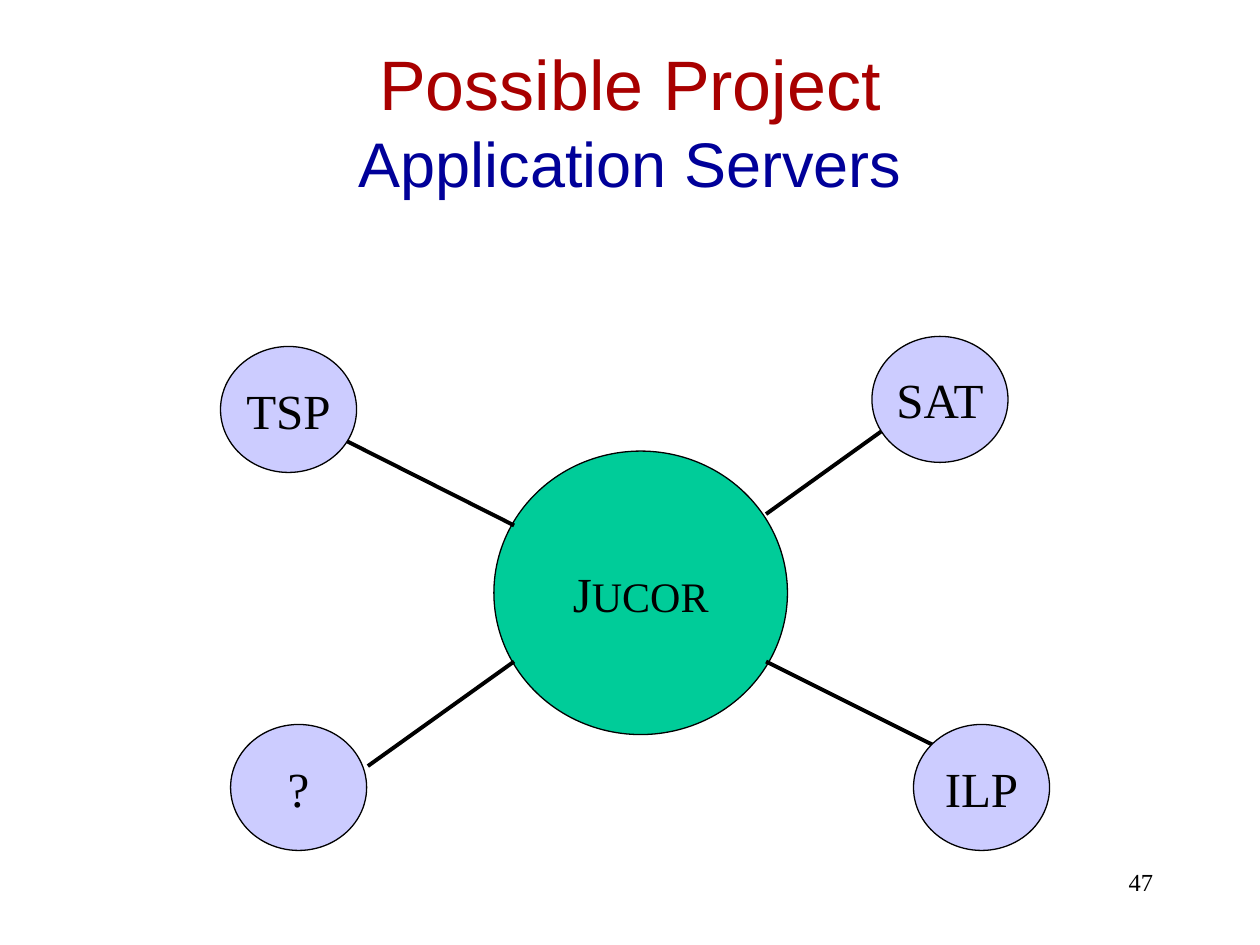
from pptx import Presentation
from pptx.dml.color import RGBColor
from pptx.enum.shapes import MSO_CONNECTOR as Connector, MSO_SHAPE as Shape
from pptx.enum.text import MSO_ANCHOR as Anchor, PP_ALIGN as Align
from pptx.oxml import parse_xml
from pptx.oxml.ns import nsdecls
from pptx.util import Inches, Pt

COLORS = {
    "title": "A80000",
    "subtitle": "000099",
    "hub": "00CC99",
    "server": "CCCCFF",
    "ink": "000000",
}
SERVER_SIZE = (1.08, 1)
SERVERS = [
    ("TSP", (1.75, 2.75), (2.75, 3.5), (4.08, 4.17)),
    ("SAT", (6.92, 2.67), (7, 3.42), (6.08, 4.08)),
    ("ILP", (7.25, 5.75), (7.42, 5.92), (6.08, 5.25)),
    ("?", (1.83, 5.75), (2.92, 6.08), (4.08, 5.25)),
]


def color(name):
    return RGBColor.from_string(COLORS[name])


def add_text(paragraph, text, size, font="Times New Roman", fill="ink", align=Align.CENTER):
    paragraph.alignment = align
    run = paragraph.add_run()
    run.text = text
    run.font.size = Pt(size)
    run.font.name = font
    run.font.color.rgb = color(fill)


def add_title(slide):
    title = slide.shapes.title
    title.left, title.top = Inches(0.75), Inches(0.33)
    title.width, title.height = Inches(8.5), Inches(1.25)
    title.text_frame.vertical_anchor = Anchor.MIDDLE
    paragraph = title.text_frame.paragraphs[0]
    add_text(paragraph, "Possible Project", 40, font="Arial", fill="title")
    paragraph.add_line_break()
    add_text(paragraph, "Application Servers", 36, font="Arial", fill="subtitle")


def add_circle(slide, position, size, fill, runs):
    circle = slide.shapes.add_shape(Shape.OVAL, *map(Inches, position + size))
    circle.shadow.inherit = False
    circle.fill.solid()
    circle.fill.fore_color.rgb = color(fill)
    circle.line.color.rgb = color("ink")
    circle.line.width = Pt(0.75)
    frame = circle.text_frame
    frame.word_wrap = False
    frame.vertical_anchor = Anchor.MIDDLE
    for text, text_size in runs:
        add_text(frame.paragraphs[0], text, text_size)


def add_link(slide, start, end):
    link = slide.shapes.add_connector(Connector.STRAIGHT, *map(Inches, start + end))
    link.line.color.rgb = color("ink")
    link.line.width = Pt(2.25)
    link._element.spPr.append(parse_xml(f"<a:effectLst {nsdecls('a')}/>"))


def add_page_number(slide, number):
    box = slide.shapes.add_textbox(Inches(7.17), Inches(6.83), Inches(2.08), Inches(0.5))
    box.text_frame.word_wrap = True
    add_text(box.text_frame.paragraphs[0], number, 14, align=Align.RIGHT)


def main():
    presentation = Presentation()
    presentation.slide_width = Inches(10)
    presentation.slide_height = Inches(7.5)
    slide = presentation.slides.add_slide(presentation.slide_layouts[5])
    add_title(slide)
    add_page_number(slide, "47")
    add_circle(slide, (3.92, 3.58), (2.33, 2.25), "hub", [("J", 28), ("UCOR", 24)])
    for name, position, start, end in SERVERS:
        add_link(slide, start, end)
        add_circle(slide, position, SERVER_SIZE, "server", [(name, 28)])
    presentation.save("out.pptx")


if __name__ == "__main__":
    main()
